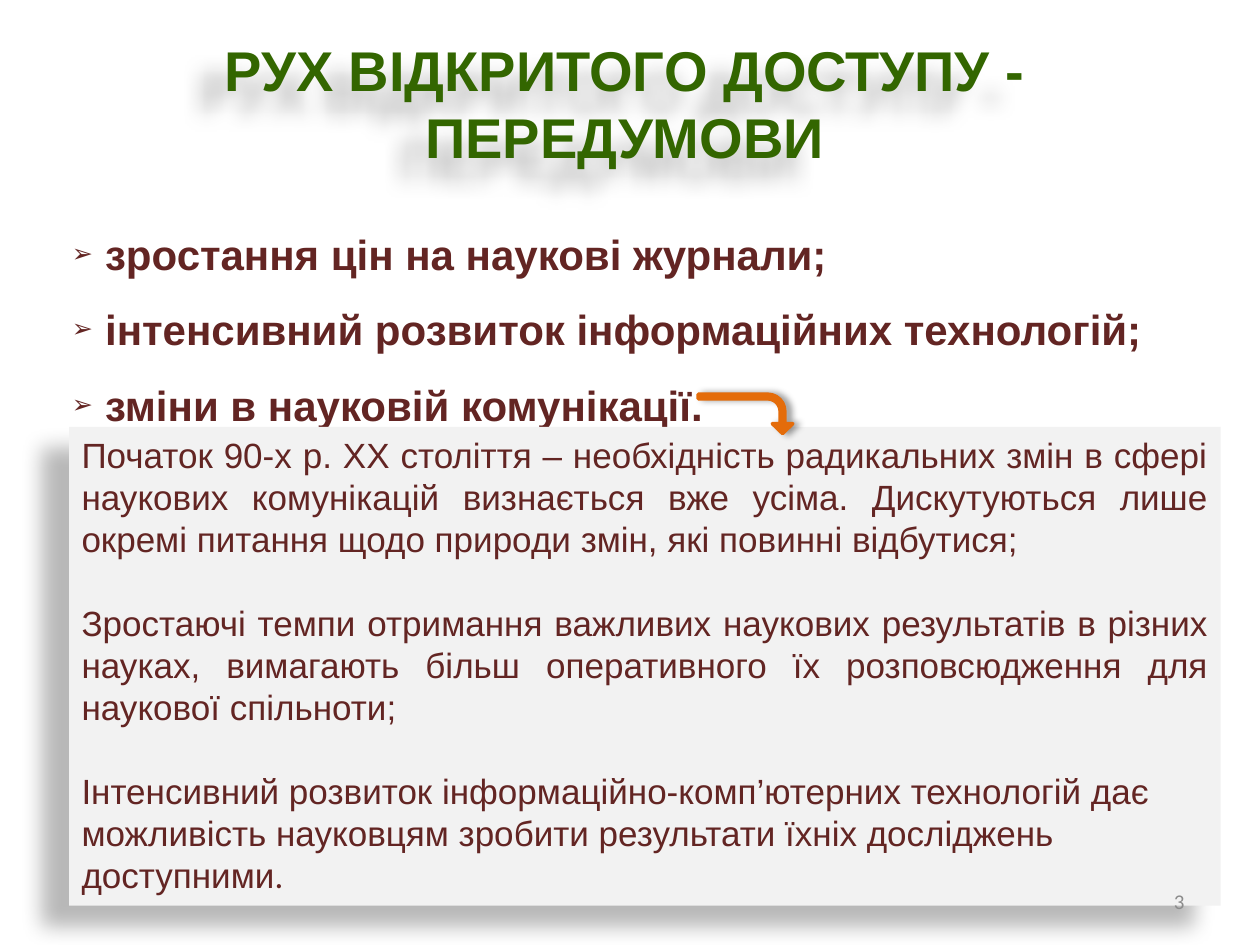
from lxml.etree import SubElement
from pptx import Presentation
from pptx.dml.color import RGBColor
from pptx.enum.shapes import MSO_SHAPE
from pptx.enum.text import MSO_ANCHOR, MSO_AUTO_SIZE, PP_ALIGN
from pptx.oxml.ns import qn
from pptx.util import Pt

# Content
TITLE = "РУХ ВІДКРИТОГО ДОСТУПУ - ПЕРЕДУМОВИ"
PREREQUISITES = [
    "зростання цін на наукові журнали;",
    "інтенсивний розвиток інформаційних технологій;",
    "зміни в науковій комунікації.",
]
# Each paragraph: alignment, then (text, font role) runs
BACKGROUND = [
    (PP_ALIGN.JUSTIFY, [(
        "Початок 90-х р. ХХ століття – необхідність радикальних змін в сфері "
        "наукових комунікацій визнається вже усіма. Дискутуються лише окремі "
        "питання щодо природи змін, які повинні відбутися;", "font")]),
    (PP_ALIGN.JUSTIFY, [(
        "Зростаючі темпи отримання важливих наукових результатів в різних "
        "науках, вимагають більш оперативного їх розповсюдження для наукової "
        "спільноти;", "font")]),
    (PP_ALIGN.LEFT, [(
        "Інтенсивний розвиток інформаційно-комп’ютерних технологій дає "
        "можливість науковцям зробити результати їхніх досліджень доступними",
        "font"), (".", "minor_font")]),
]
PAGE_NUMBER = "3"

THEME = {
    "font": "Arial", "minor_font": "Calibri",
    "title": "336600", "text": "632523", "panel": "F2F2F2",
    "arrow": "E46C0A", "number": "8C8C8C",
    "title_size": 32, "list_size": 24, "body_size": 20, "number_size": 12,
}

# Places: left, top, width, height
TITLE_BOX = (28, 16.5, 658, 85)
LIST_BOX = (34, 112.5, 652, 160)
PANEL_BOX = (39.5, 244, 658, 273.5)
ARROW_BOX = (414.75, 209.5, 22.5, 54)
NUMBER_BOX = (516, 500.5, 168, 28.8)
BULLET_INDENT = 19
BODY_GAP = 24

# Shadows: opacity in percent, blur, distance, direction in degrees
DEEP_SHADOW = (28, 11.8, 19.7, 141)
ARROW_SHADOW = (40, 4, 3, 0)


def points(values):
    return [Pt(value) for value in values]


def place(part, box):
    part.left, part.top, part.width, part.height = points(box)


def prepare_frame(part, anchor=MSO_ANCHOR.TOP):
    frame = part.text_frame
    frame.word_wrap = True
    frame.auto_size = MSO_AUTO_SIZE.NONE
    frame.vertical_anchor = anchor
    return frame


def add_text(paragraph, text, size, color, font="font", bold=False,
             align=PP_ALIGN.LEFT):
    paragraph.alignment = align
    run = paragraph.add_run()
    run.text = text
    run.font.name = THEME[font]
    run.font.size = Pt(THEME[size])
    run.font.bold = bold
    run.font.color.rgb = RGBColor.from_string(THEME[color])


def add_bullet(paragraph):
    properties = paragraph._p.get_or_add_pPr()
    properties.set("marL", str(Pt(BULLET_INDENT)))
    properties.set("indent", str(-Pt(BULLET_INDENT)))
    SubElement(properties, qn("a:buSzPct"), val="60000")
    SubElement(properties, qn("a:buFont"), typeface=THEME["font"])
    SubElement(properties, qn("a:buChar"), char="➢")


def add_shadow(part, opacity, blur, distance, direction):
    part.shadow.inherit = False
    effects = part._element.spPr.find(qn("a:effectLst"))
    outer = SubElement(effects, qn("a:outerShdw"), blurRad=str(Pt(blur)),
                       dist=str(Pt(distance)), dir=str(direction * 60000),
                       algn="ctr", rotWithShape="0")
    color = SubElement(outer, qn("a:srgbClr"), val="000000")
    SubElement(color, qn("a:alpha"), val=str(opacity * 1000))


def add_filled(slide, kind, box, color, shadow):
    part = slide.shapes.add_shape(kind, *points(box))
    part.fill.solid()
    part.fill.fore_color.rgb = RGBColor.from_string(THEME[color])
    part.line.fill.background()
    add_shadow(part, *shadow)
    return part


def main():
    deck = Presentation()
    deck.slide_width, deck.slide_height = Pt(720), Pt(540)
    slide = deck.slides.add_slide(deck.slide_layouts[5])

    # Title
    title = slide.shapes.title
    place(title, TITLE_BOX)
    add_text(prepare_frame(title).paragraphs[0], TITLE, "title_size", "title",
             bold=True, align=PP_ALIGN.CENTER)
    add_shadow(title, *DEEP_SHADOW)

    # Prerequisites list
    prerequisites = prepare_frame(slide.shapes.add_textbox(*points(LIST_BOX)))
    for index, item in enumerate(PREREQUISITES):
        paragraph = (prerequisites.add_paragraph() if index
                     else prerequisites.paragraphs[0])
        paragraph.line_spacing = 1.5
        add_bullet(paragraph)
        add_text(paragraph, item, "list_size", "text", bold=True)

    # Background panel
    panel = add_filled(slide, MSO_SHAPE.RECTANGLE, PANEL_BOX, "panel",
                       DEEP_SHADOW)
    background = prepare_frame(panel)
    for index, (align, runs) in enumerate(BACKGROUND):
        paragraph = (background.add_paragraph() if index
                     else background.paragraphs[0])
        if index:
            paragraph.space_before = Pt(BODY_GAP)
        for text, font in runs:
            add_text(paragraph, text, "body_size", "text", font=font,
                     align=align)

    # Arrow from the list to the panel
    arrow = add_filled(slide, MSO_SHAPE.BENT_ARROW, ARROW_BOX, "arrow",
                       ARROW_SHADOW)
    arrow.rotation = 90
    arrow.line.color.rgb = RGBColor.from_string(THEME["arrow"])
    arrow.line.width = Pt(2)
    for index, value in enumerate((0.12, 0.26, 0.25, 0.44)):
        arrow.adjustments[index] = value

    # Page number
    number = slide.shapes.add_textbox(*points(NUMBER_BOX))
    add_text(prepare_frame(number, MSO_ANCHOR.MIDDLE).paragraphs[0],
             PAGE_NUMBER, "number_size", "number", font="minor_font",
             align=PP_ALIGN.RIGHT)

    deck.save("out.pptx")


if __name__ == "__main__":
    main()
